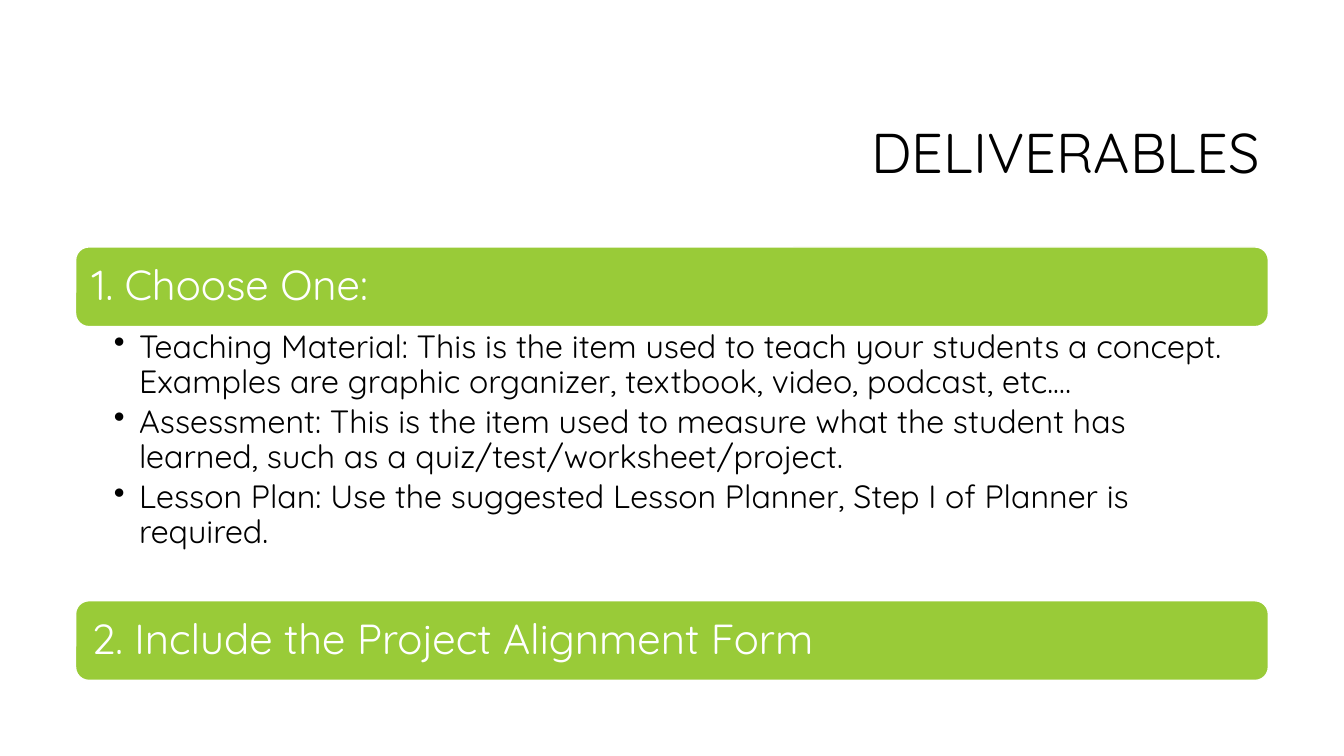
"""Builds the Deliverables slide: a title and two numbered bars, the first with bullets."""
from dataclasses import dataclass

from lxml.etree import SubElement
from pptx import Presentation
from pptx.dml.color import RGBColor
from pptx.enum.shapes import MSO_SHAPE
from pptx.enum.text import MSO_ANCHOR, PP_ALIGN
from pptx.oxml.ns import qn
from pptx.util import Inches, Pt

TITLE = "DELIVERABLES"
STEPS = [
    ("1. Choose One:", [
        "Teaching Material: This is the item used to teach your students a concept. "
        "Examples are graphic organizer, textbook, video, podcast, etc.…",
        "Assessment: This is the item used to measure what the student has learned, "
        "such as a quiz/test/worksheet/project.",
        "Lesson Plan: Use the suggested Lesson Planner, Step I of Planner is required.",
    ]),
    ("2. Include the Project Alignment Form", []),
]


@dataclass(frozen=True)
class Theme:
    font: str = "Quicksand"
    ink: RGBColor = RGBColor(0, 0, 0)
    paper: RGBColor = RGBColor(255, 255, 255)
    green: RGBColor = RGBColor(0x99, 0xCB, 0x38)
    title_size: int = 40
    step_size: int = 30
    detail_size: int = 23


THEME = Theme()
WIDTH, HEIGHT = 13.33, 7.5
MARGIN = 0.75
COLUMN = WIDTH - 2 * MARGIN
STEPS_TOP = 2.45
BAR_HEIGHT, DETAILS_HEIGHT = 0.79, 2.72
HANGING = Inches(0.25)


def write(frame, lines, size, color, anchor, insets, align=PP_ALIGN.LEFT, after=0, bullet=None):
    frame.word_wrap = True
    frame.vertical_anchor = anchor
    (frame.margin_left, frame.margin_top,
     frame.margin_right, frame.margin_bottom) = map(Inches, insets)
    for index, line in enumerate(lines):
        paragraph = frame.add_paragraph() if index else frame.paragraphs[0]
        paragraph.text = line
        paragraph.alignment = align
        paragraph.line_spacing = 0.9
        paragraph.space_after = Pt(after)
        if bullet:
            properties = paragraph._p.get_or_add_pPr()
            properties.set("marL", str(HANGING))
            properties.set("indent", str(-HANGING))
            SubElement(properties, qn("a:buChar")).set("char", bullet)
        font = paragraph.font
        font.name, font.size = THEME.font, Pt(size)
        font.color.rgb = color


def add_bar(slide, top, heading):
    bar = slide.shapes.add_shape(
        MSO_SHAPE.ROUNDED_RECTANGLE, *map(Inches, (MARGIN, top, COLUMN, BAR_HEIGHT)))
    bar.shadow.inherit = False
    bar.fill.solid()
    bar.fill.fore_color.rgb = THEME.green
    bar.line.color.rgb = THEME.paper
    bar.line.width = Pt(1)
    write(bar.text_frame, [heading], THEME.step_size, THEME.paper, MSO_ANCHOR.MIDDLE, [0.12] * 4)


def add_text(slide, box, *args, **options):
    write(slide.shapes.add_textbox(*map(Inches, box)).text_frame, *args, **options)


def main():
    deck = Presentation()
    deck.slide_width, deck.slide_height = Inches(WIDTH), Inches(HEIGHT)
    slide = deck.slides.add_slide(deck.slide_layouts[6])
    add_text(slide, (3.17, 0.84, 9.42, 1.41), [TITLE], THEME.title_size, THEME.ink,
             MSO_ANCHOR.MIDDLE, (0.1, 0.05, 0.1, 0.05), align=PP_ALIGN.RIGHT)
    top = STEPS_TOP
    for heading, details in STEPS:
        add_bar(slide, top, heading)
        top += BAR_HEIGHT
        if details:
            add_text(slide, (MARGIN, top, COLUMN, DETAILS_HEIGHT), details, THEME.detail_size,
                     THEME.ink, MSO_ANCHOR.TOP, (0.38, 0.04, 0.23, 0.04), after=4, bullet="•")
            top += DETAILS_HEIGHT
    deck.save("out.pptx")


if __name__ == "__main__":
    main()
